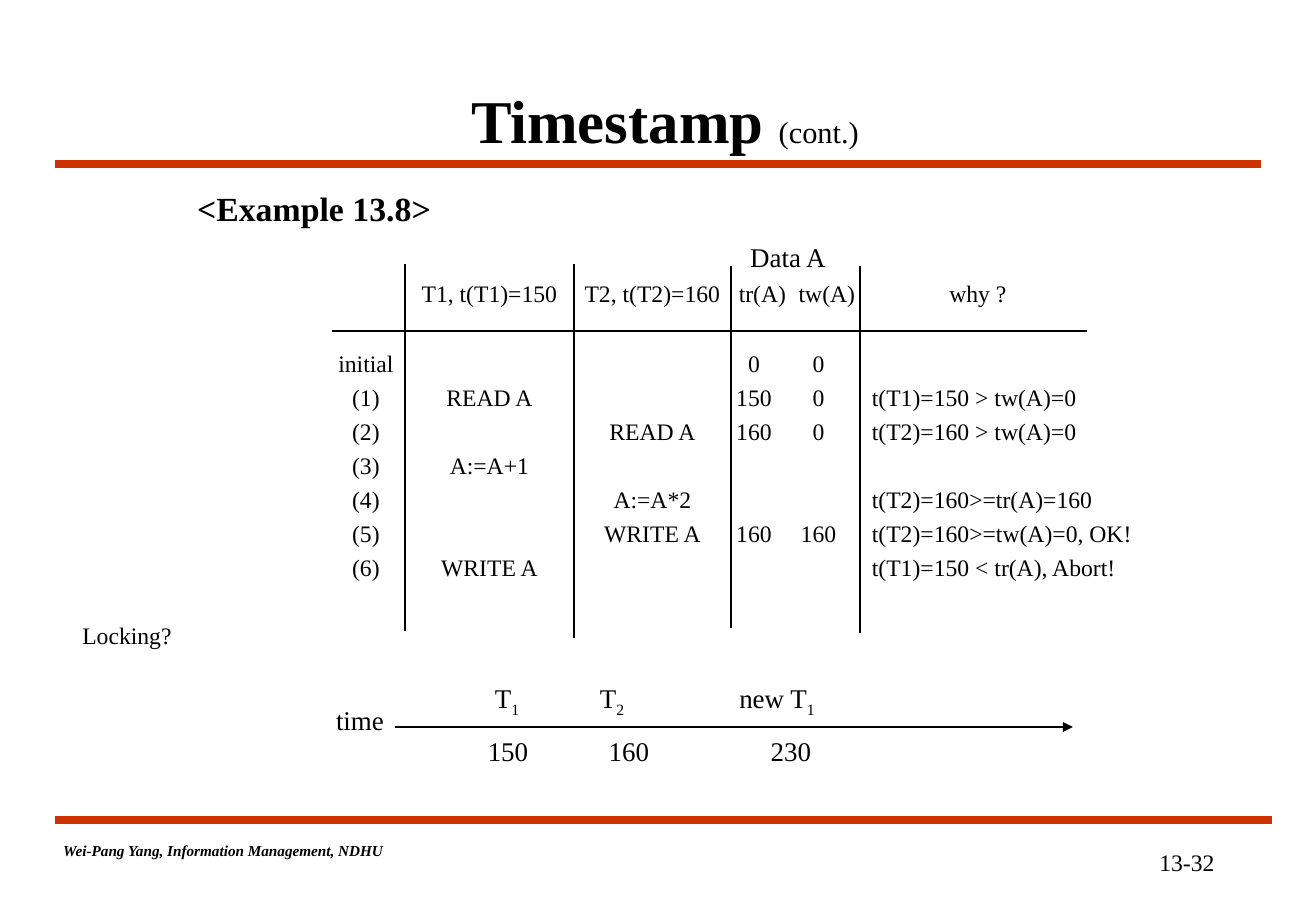
from lxml import etree
from pptx import Presentation
from pptx.dml.color import RGBColor
from pptx.enum.shapes import MSO_CONNECTOR
from pptx.enum.text import MSO_ANCHOR, PP_ALIGN
from pptx.oxml.ns import qn
from pptx.util import Pt

PX = 7526  # EMU per px
FONT = "Times New Roman"
COLORS = {"text": "000000", "rule": "CC3300"}

prs = Presentation()
prs.slide_width, prs.slide_height = 1316 * PX, 911 * PX
s = prs.slides.add_slide(prs.slide_layouts[5])


def add_runs(tf, runs, size, align=PP_ALIGN.CENTER, bold=False, italic=False):
    """Fill a frame's first paragraph; a run starting with "_" is a subscript."""
    tf.margin_left = tf.margin_right = tf.margin_top = tf.margin_bottom = 0
    tf.vertical_anchor = MSO_ANCHOR.MIDDLE
    p = tf.paragraphs[0]
    p.alignment = align
    for text in runs:
        r = p.add_run()
        r.text = text.lstrip("_")
        r.font.name, r.font.size = FONT, Pt(size)
        r.font.bold, r.font.italic = bold, italic
        r.font.color.rgb = RGBColor.from_string(COLORS["text"])
        if text.startswith("_"):
            r._r.get_or_add_rPr().set("baseline", "-25000")


def add_line(x1, y1, x2, y2, color="text", width=1):
    line = s.shapes.add_connector(
        MSO_CONNECTOR.STRAIGHT, x1 * PX, y1 * PX, x2 * PX, y2 * PX)
    line.line.color.rgb = RGBColor.from_string(COLORS[color])
    line.line.width = Pt(width)
    etree.SubElement(line._element.spPr, qn("a:effectLst"))
    return line


# Title
title = s.shapes.title
title.left, title.top, title.width, title.height = 122 * PX, 81 * PX, 1086 * PX, 76 * PX
add_runs(title.text_frame, ["Timestamp ", "(cont.)"], 36, bold=True)
cont = title.text_frame.paragraphs[0].runs[1]
cont.font.size, cont.font.bold = Pt(18), False

# Red rules above and below the content
add_line(55, 164, 1261, 164, "rule", 4.5)
add_line(55, 820, 1272, 820, "rule", 4.5)

# Schedule table
rows = [
    ["", "T1, t(T1)=150", "T2, t(T2)=160", "tr(A)", "tw(A)", "why ?"],
    ["initial", "", "", "0", "0", ""],
    ["(1)", "READ A", "", "150", "0", "t(T1)=150 > tw(A)=0"],
    ["(2)", "", "READ A", "160", "0", "t(T2)=160 > tw(A)=0"],
    ["(3)", "A:=A+1", "", "", "", ""],
    ["(4)", "", "A:=A*2", "", "", "t(T2)=160>=tr(A)=160"],
    ["(5)", "", "WRITE A", "160", "160", "t(T2)=160>=tw(A)=0, OK!"],
    ["(6)", "WRITE A", "", "", "", "t(T1)=150 < tr(A), Abort!"],
]
edges = [327, 405, 574, 731, 794, 860, 1150]
header_h, row_h = 83, 34
WHY = 5
table = s.shapes.add_table(
    len(rows), len(rows[0]), edges[0] * PX, 264 * PX,
    (edges[-1] - edges[0]) * PX, (header_h + row_h * (len(rows) - 1)) * PX).table
table.first_row = table.horz_banding = False
for j, (left, right) in enumerate(zip(edges, edges[1:])):
    table.columns[j].width = (right - left) * PX
for i, row in enumerate(rows):
    table.rows[i].height = (row_h if i else header_h) * PX
    for j, text in enumerate(row):
        cell = table.cell(i, j)
        cell.fill.background()
        why_body = i > 0 and j == WHY
        add_runs(cell.text_frame, [text], 14,
                 PP_ALIGN.LEFT if why_body else PP_ALIGN.CENTER)
        cell.margin_left = cell.margin_right = cell.margin_top = cell.margin_bottom = 0
        cell.vertical_anchor = MSO_ANCHOR.MIDDLE
        if i == 0:
            cell.vertical_anchor = MSO_ANCHOR.TOP
            cell.margin_top = 17 * PX
            cell.margin_right = 54 * PX if j == WHY else 0
        elif j == WHY:
            cell.margin_left = 12 * PX
        elif j in (3, 4):
            cell.margin_right = 17 * PX

# Table grid
add_line(332, 331, 1087, 331)
for x, top, bottom in [(405, 264, 631), (574, 264, 638), (731, 266, 628), (860, 266, 633)]:
    add_line(x, top, x, bottom)

# Time axis
axis = add_line(395, 727, 1073, 727)
etree.SubElement(axis.line._get_or_add_ln(), qn("a:tailEnd"), type="triangle")

# Labels: centre x, centre y, width, size, runs, bold, italic
labels = [
    (314, 208, 260, 20, ["<Example 13.8>"], True, False),
    (788, 257, 112, 16, ["Data A"], False, False),
    (127, 635, 114, 14, ["Locking?"], False, False),
    (360, 720, 90, 16, ["time"], False, False),
    (507, 700, 60, 16, ["T", "_1"], False, False),
    (612, 700, 60, 16, ["T", "_2"], False, False),
    (777, 700, 110, 16, ["new T", "_1"], False, False),
    (508, 751, 60, 16, ["150"], False, False),
    (629, 751, 60, 16, ["160"], False, False),
    (791, 751, 60, 16, ["230"], False, False),
    (223, 851, 392, 9, ["Wei-Pang Yang, Information Management, NDHU"], True, True),
    (1187, 862, 84, 14, ["13-32"], False, False),
]
for cx, cy, w, size, runs, bold, italic in labels:
    h = size * 2
    sp = s.shapes.add_textbox((cx - w // 2) * PX, (cy - h // 2) * PX, w * PX, h * PX)
    sp.text_frame.word_wrap = True
    add_runs(sp.text_frame, runs, size, bold=bold, italic=italic)

prs.save("out.pptx")
